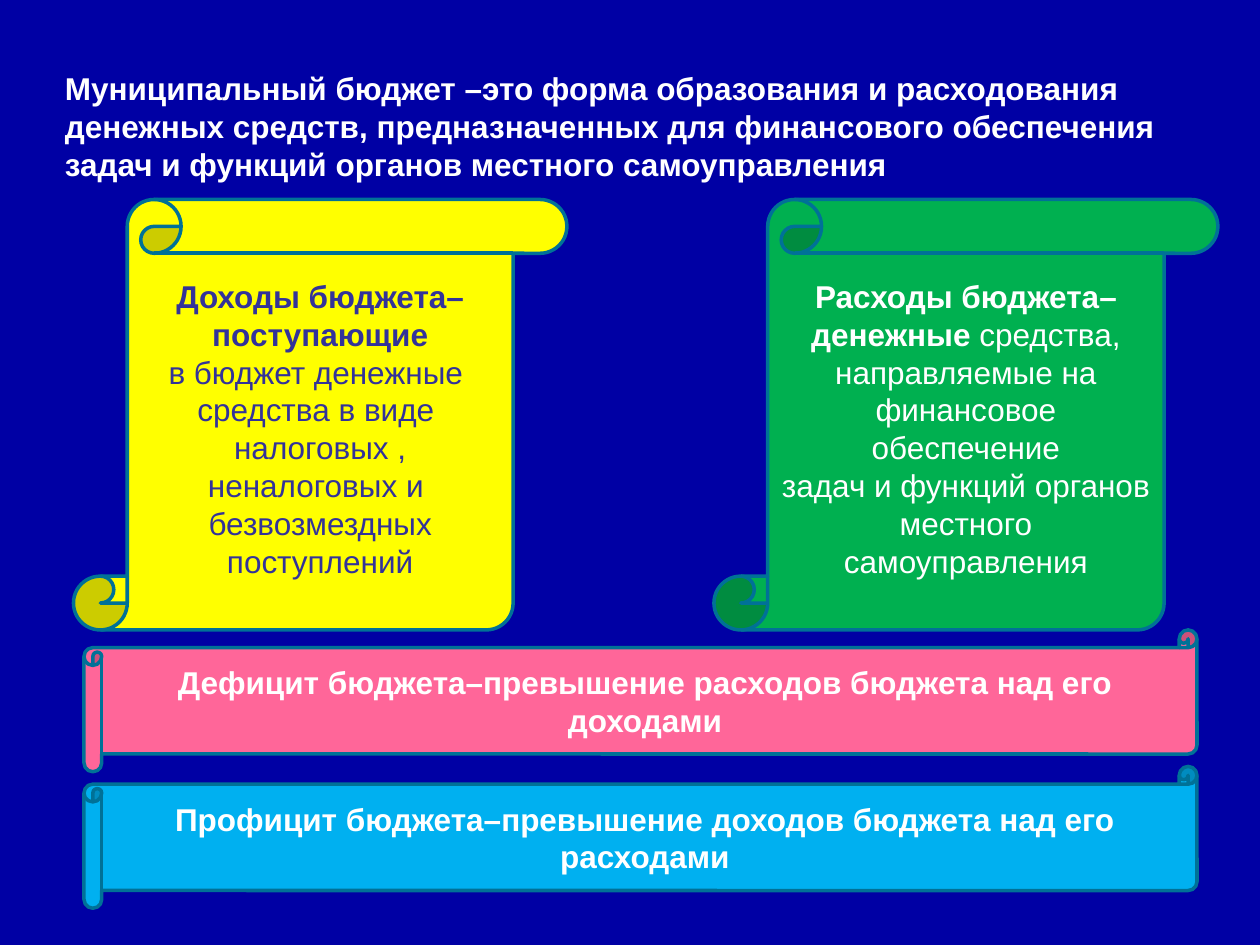
from pptx import Presentation
from pptx.dml.color import RGBColor
from pptx.enum.shapes import MSO_SHAPE as Shape
from pptx.enum.text import MSO_ANCHOR as Anchor, PP_ALIGN as Align
from pptx.util import Inches, Pt

NAVY = RGBColor(0x00, 0x00, 0xA4)
WHITE = RGBColor(0xFF, 0xFF, 0xFF)
INDIGO = RGBColor(0x33, 0x33, 0x99)
TEAL = RGBColor(0x00, 0x71, 0x97)
GREEN = RGBColor(0x00, 0xB0, 0x50)
YELLOW = RGBColor(0xFF, 0xFF, 0x00)
PINK = RGBColor(0xFF, 0x66, 0x99)
SKY = RGBColor(0x00, 0xB0, 0xF0)

COLS, ROWS = 120, 90  # square grid cells across a 10 x 7.5 inch slide

# Each paragraph is a list of (text, bold) runs.
DEFINITION = [[("Муниципальный бюджет –это форма образования и расходования "
                "денежных средств, предназначенных для финансового обеспечения "
                "задач и функций органов местного самоуправления", True)]]
EXPENSES = [
    [("Расходы бюджета–денежные ", True),
     ("средства, направляемые на финансовое обеспечение", False)],
    [("задач и функций органов", False)],
    [("местного самоуправления", False)],
]
INCOME = [
    [("Доходы бюджета–поступающие", True)],
    [("в бюджет денежные ", False)],
    [("средства в виде ", False)],
    [("налоговых , неналоговых и ", False)],
    [("безвозмездных поступлений", False)],
]
DEFICIT = [[("Дефицит бюджета–превышение расходов бюджета над его доходами", True)]]
SURPLUS = [[("Профицит бюджета–превышение доходов бюджета над его расходами", True)]]

# (preset, (column, row, columns wide, rows high), fill, text colour, paragraphs)
SCROLLS = [
    (Shape.VERTICAL_SCROLL, (68, 19, 48, 41), GREEN, WHITE, EXPENSES),
    (Shape.VERTICAL_SCROLL, (7, 19, 47, 41), YELLOW, INDIGO, INCOME),
    (Shape.HORIZONTAL_SCROLL, (8, 60, 106, 13.5), PINK, WHITE, DEFICIT),
    (Shape.HORIZONTAL_SCROLL, (8, 73, 106, 13.5), SKY, WHITE, SURPLUS),
]

prs = Presentation()
prs.slide_width, prs.slide_height = Inches(10), Inches(7.5)
s = prs.slides.add_slide(prs.slide_layouts[6])
s.background.fill.solid()
s.background.fill.fore_color.rgb = NAVY


def place(col, row, wide, high):
    """Turn a grid box into left, top, width and height."""
    cell_w, cell_h = prs.slide_width / COLS, prs.slide_height / ROWS
    return int(col * cell_w), int(row * cell_h), int(wide * cell_w), int(high * cell_h)


def write(tf, paragraphs, color, align, anchor):
    tf.word_wrap = True
    tf.vertical_anchor = anchor
    for i, runs in enumerate(paragraphs):
        p = tf.add_paragraph() if i else tf.paragraphs[0]
        p.alignment = align
        for text, bold in runs:
            r = p.add_run()
            r.text = text
            for name, value in {"name": "Arial", "size": Pt(18), "bold": bold}.items():
                setattr(r.font, name, value)
            r.font.color.rgb = color


definition = s.shapes.add_textbox(*place(5, 6, 111, 12))
write(definition.text_frame, DEFINITION, WHITE, Align.LEFT, Anchor.TOP)

for preset, box, fill, color, paragraphs in SCROLLS:
    sp = s.shapes.add_shape(preset, *place(*box))
    sp.shadow.inherit = False
    sp.fill.solid()
    sp.fill.fore_color.rgb = fill
    sp.line.color.rgb = TEAL
    sp.line.width = Pt(2)
    write(sp.text_frame, paragraphs, color, Align.CENTER, Anchor.MIDDLE)

prs.save("out.pptx")
